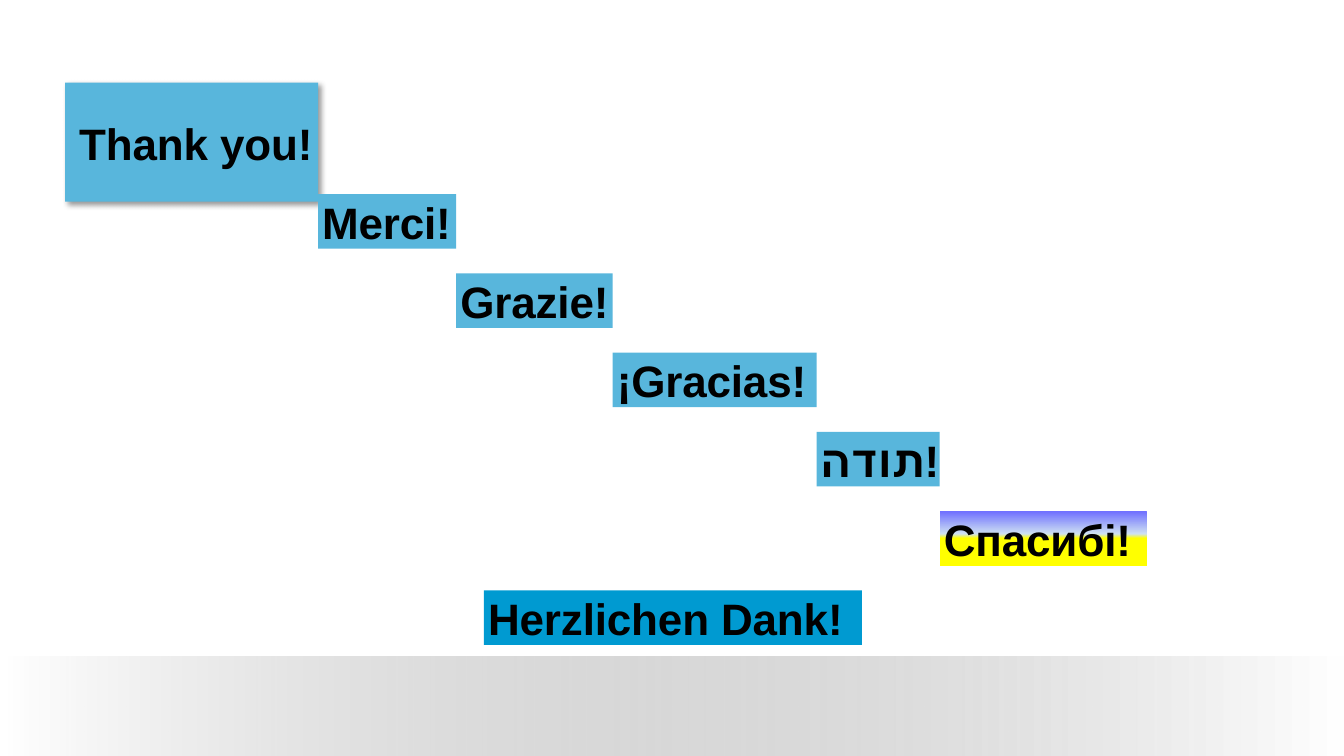
from pptx import Presentation
from pptx.dml.color import RGBColor
from pptx.enum.shapes import MSO_SHAPE
from pptx.enum.text import MSO_ANCHOR, MSO_AUTO_SIZE, PP_ALIGN
from pptx.oxml import parse_xml
from pptx.oxml.ns import nsdecls, qn
from pptx.util import Pt

COLORS = {
    "text": "000000", "sky": "58B6DC", "blue": "009AD1",
    "gray": "646464", "white": "FFFFFF",
    "violet": "6E6EFF", "pale": "CEE1F2", "yellow": "FFFF00",
}
WIDE, HIGH = 960, 540


def write(frame, text, size=31.4, font="Arial", bold=True, color="text",
          anchor=MSO_ANCHOR.MIDDLE, margin=2.88, indent=0, before=0, spacing=-10):
    """Fill a text frame with one formatted paragraph."""
    frame.auto_size = MSO_AUTO_SIZE.NONE
    frame.word_wrap = True
    frame.vertical_anchor = anchor
    frame.margin_left = frame.margin_right = frame.margin_bottom = 0
    frame.margin_top = Pt(0.7)
    para = frame.paragraphs[0]
    para.alignment = PP_ALIGN.LEFT
    para.space_before = Pt(before)
    props = para._p.get_or_add_pPr()
    props.set("marL", str(Pt(margin)))
    props.set("indent", str(Pt(indent)))
    run = para.add_run()
    run.text = text
    run.font.size, run.font.name, run.font.bold = Pt(size), font, bold
    run.font.color.rgb = RGBColor.from_string(COLORS[color])
    run._r.get_or_add_rPr().set("spc", str(spacing))


class Deck:
    """Holds the style and the current slide."""

    def __init__(self):
        self.prs = Presentation()
        self.prs.slide_width, self.prs.slide_height = Pt(WIDE), Pt(HIGH)
        self.slide = self.prs.slides.add_slide(self.prs.slide_layouts[5])

    def paint(self, shape, fill, angle=0):
        """Fill with a colour name or with (place, colour, opacity) stops."""
        if isinstance(fill, str):
            shape.fill.solid()
            shape.fill.fore_color.rgb = RGBColor.from_string(COLORS[fill])
        else:
            stops = "".join(
                f'<a:gs pos="{place * 1000}"><a:srgbClr val="{COLORS[name]}">'
                f'<a:alpha val="{alpha * 1000}"/></a:srgbClr></a:gs>'
                for place, name, alpha in fill)
            shape._element.spPr.insert(2, parse_xml(
                f'<a:gradFill {nsdecls("a")} rotWithShape="1"><a:gsLst>{stops}</a:gsLst>'
                f'<a:lin ang="{angle * 60000}" scaled="0"/></a:gradFill>'))
        shape.line.fill.background()
        shape.shadow.inherit = False

    def box(self, left, top, width, height, fill, angle=0):
        shape = self.slide.shapes.add_shape(
            MSO_SHAPE.RECTANGLE, Pt(left), Pt(top), Pt(width), Pt(height))
        self.paint(shape, fill, angle)
        return shape

    def label(self, text, left, top, width, fill="sky"):
        shape = self.box(left, top, width, 38.9, fill, angle=90)
        write(shape.text_frame, text)

    def title(self, text, left, top, width, height):
        shape = self.slide.shapes.title
        shape.left, shape.top = Pt(left), Pt(top)
        shape.width, shape.height = Pt(width), Pt(height)
        self.paint(shape, "sky")
        shape._element.spPr.find(qn("a:effectLst")).append(parse_xml(
            f'<a:outerShdw {nsdecls("a")} blurRad="{Pt(4)}" dist="{Pt(3)}" dir="2700000">'
            f'<a:srgbClr val="{COLORS["text"]}"><a:alpha val="40000"/></a:srgbClr>'
            '</a:outerShdw>'))
        write(shape.text_frame, text, indent=7.2)


def main():
    deck = Deck()

    # Fading band at the foot
    deck.box(0, 469, WIDE, HIGH - 469, [(0, "gray", 0), (100, "white", 100)])

    # Title
    deck.title("Thank you!", 46.5, 59, 180.7, 85)

    # Stairs of thanks: each step starts where the last one ends
    flag = [(0, "violet", 100), (42, "pale", 100), (50, "yellow", 100)]
    steps = [("Merci!", 98.7, "sky"), ("Grazie!", 111.8, "sky"),
             ("¡Gracias!", 145.6, "sky"), ("תודה!", 88, "sky"),
             ("Спасибі!", 147.8, flag)]
    left, top, rise = 227.2, 138.7, 56.6
    for text, width, fill in steps:
        deck.label(text, left, top, width, fill)
        left += width
        top += rise

    # Closing thanks
    deck.label("Herzlichen Dank!", 345.7, top, 270, "blue")

    deck.prs.save("out.pptx")


if __name__ == "__main__":
    main()
